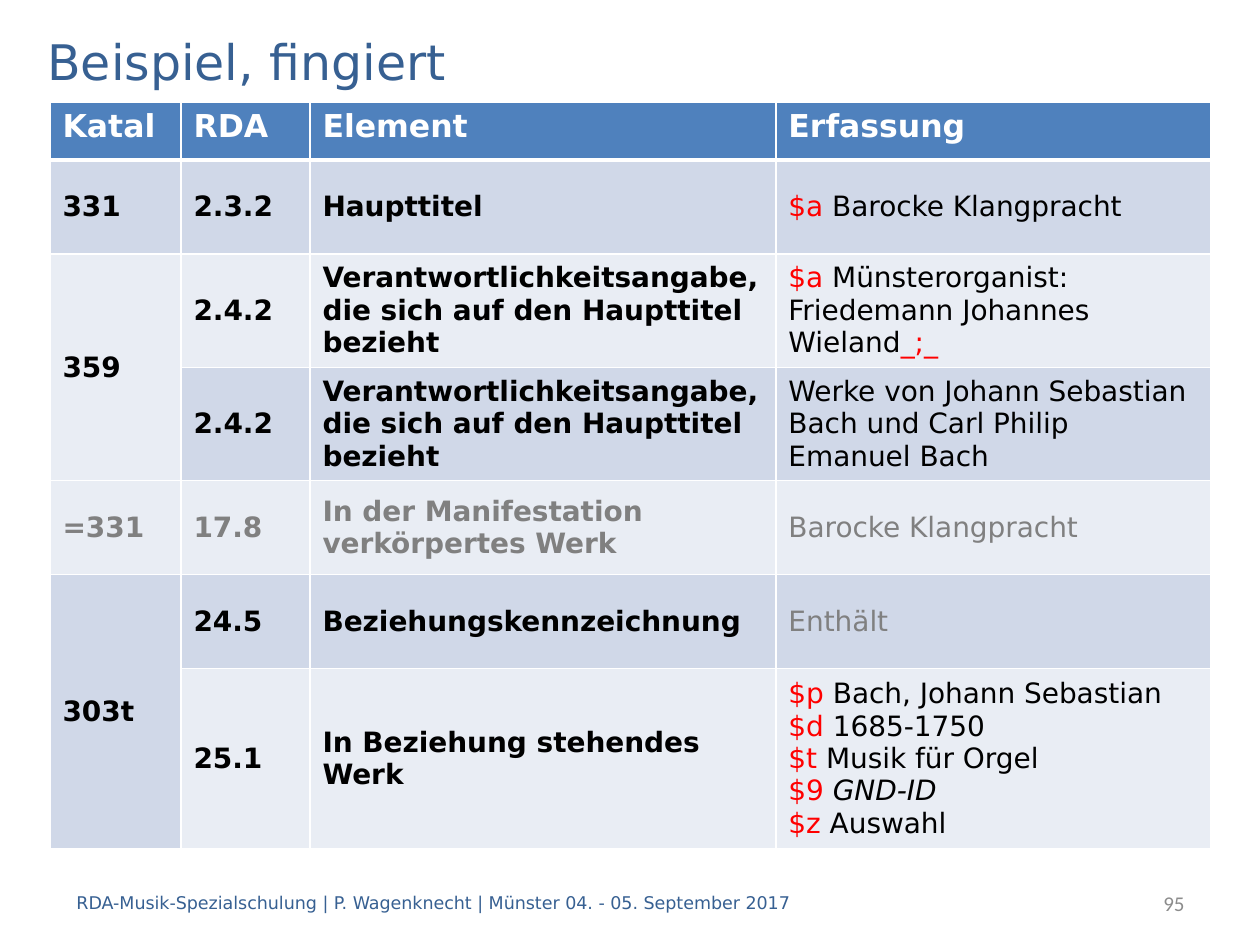
from lxml.etree import SubElement
from pptx import Presentation
from pptx.dml.color import RGBColor
from pptx.enum.text import MSO_ANCHOR, PP_ALIGN
from pptx.oxml.ns import qn
from pptx.util import Emu, Pt

EMU_PER_PX = 914400 / 126

WHITE = RGBColor(0xFF, 0xFF, 0xFF)
BLACK = RGBColor(0, 0, 0)
RED = RGBColor(0xFF, 0, 0)
GREY = RGBColor(0x80, 0x80, 0x80)
LIGHT_GREY = RGBColor(0x8C, 0x8C, 0x8C)
NAVY = RGBColor(0x37, 0x60, 0x92)
HEADER_BLUE = RGBColor(0x4F, 0x81, 0xBD)
BANDS = [RGBColor(0xD0, 0xD8, 0xE8), RGBColor(0xE9, 0xED, 0xF4)]

FONT = "DejaVu Sans"
COLUMN_WIDTHS = [131, 129, 466, 435]
ROW_HEIGHTS = [58, 94, 110, 110, 94, 94, 174]
HEADERS = ["Katal", "RDA", "Element", "Erfassung"]
RESPONSIBILITY = "Verantwortlichkeitsangabe, die sich auf den Haupttitel bezieht"

# Catalogue field (None: joined to the field above), RDA number, element, colour
ROWS = [
    ("331", "2.3.2", "Haupttitel", BLACK),
    ("359", "2.4.2", RESPONSIBILITY, BLACK),
    (None, "2.4.2", RESPONSIBILITY, BLACK),
    ("=331", "17.8", "In der Manifestation verkörpertes Werk", GREY),
    ("303t", "24.5", "Beziehungskennzeichnung", BLACK),
    (None, "25.1", "In Beziehung stehendes Werk", BLACK),
]

# Recorded values: paragraphs of (text, colour, italic) runs
ENTRIES = [
    [[("$a", RED, False), (" Barocke Klangpracht", BLACK, False)]],
    [[("$a", RED, False),
      (" Münsterorganist: Friedemann Johannes Wieland", BLACK, False),
      ("_;_", RED, False)]],
    [[("Werke von Johann Sebastian Bach und Carl Philip Emanuel Bach",
       BLACK, False)]],
    [[("Barocke Klangpracht", GREY, False)]],
    [[("Enthält", GREY, False)]],
    [[("$p", RED, False), (" Bach, Johann Sebastian", BLACK, False)],
     [("$d", RED, False), (" 1685-1750", BLACK, False)],
     [("$t", RED, False), (" Musik für Orgel", BLACK, False)],
     [("$9 ", RED, False), ("GND-ID", BLACK, True)],
     [("$z", RED, False), (" Auswahl", BLACK, False)]],
]


def px(n):
    return Emu(round(n * EMU_PER_PX))


def set_font(font, size, color=None, bold=False, name=FONT):
    font.name = name
    font.size = Pt(size)
    font.bold = bold
    if color is not None:
        font.color.rgb = color


def add_text(slide, box, text, size, color, name=FONT, align=PP_ALIGN.LEFT):
    tf = slide.shapes.add_textbox(*map(px, box)).text_frame
    tf.word_wrap = True
    tf.vertical_anchor = MSO_ANCHOR.MIDDLE
    p = tf.paragraphs[0]
    p.text = text
    p.alignment = align
    set_font(p.font, size, color, name=name)


def set_borders(cell, top=1, bottom=1):
    tcPr = cell._tc.get_or_add_tcPr()
    for side, width in (("L", 1), ("R", 1), ("T", top), ("B", bottom)):
        ln = SubElement(tcPr, qn(f"a:ln{side}"), w=str(Pt(width)))
        fill = SubElement(ln, qn("a:solidFill"))
        SubElement(fill, qn("a:srgbClr"), val=str(WHITE))


def style_cell(cell, fill, anchor=MSO_ANCHOR.MIDDLE, **borders):
    set_borders(cell, **borders)
    cell.fill.solid()
    cell.fill.fore_color.rgb = fill
    cell.vertical_anchor = anchor


def write_label(cell, text, size, color):
    p = cell.text_frame.paragraphs[0]
    p.text = text
    set_font(p.font, size, color, bold=True)


def write_entry(cell, paragraphs):
    tf = cell.text_frame
    for i, runs in enumerate(paragraphs):
        p = tf.add_paragraph() if i else tf.paragraphs[0]
        set_font(p.font, 16)
        for text, color, italic in runs:
            r = p.add_run()
            r.text = text
            r.font.color.rgb = color
            r.font.italic = italic
            r.font.bold = False


def add_field_table(slide):
    table = slide.shapes.add_table(
        len(ROW_HEIGHTS), len(HEADERS),
        px(50), px(102), px(sum(COLUMN_WIDTHS)), px(sum(ROW_HEIGHTS))).table
    for column, width in zip(table.columns, COLUMN_WIDTHS):
        column.width = px(width)
    for row, height in zip(table.rows, ROW_HEIGHTS):
        row.height = px(height)

    # Header row
    for c, text in enumerate(HEADERS):
        cell = table.cell(0, c)
        style_cell(cell, HEADER_BLUE, MSO_ANCHOR.TOP, bottom=3)
        write_label(cell, text, 18, WHITE)

    # Banded body rows
    for i, ((*labels, color), entry) in enumerate(zip(ROWS, ENTRIES), start=1):
        for c in range(len(HEADERS)):
            style_cell(table.cell(i, c), BANDS[(i - 1) % 2],
                       top=3 if i == 1 else 1)
        for c, text in enumerate(labels):
            if text is None:
                table.cell(i - 1, c).merge(table.cell(i, c))
            else:
                write_label(table.cell(i, c), text, 16, color)
        write_entry(table.cell(i, len(labels)), entry)


def main():
    prs = Presentation()
    prs.slide_width, prs.slide_height = px(1260), px(945)
    s = prs.slides.add_slide(prs.slide_layouts[6])

    # Title and table
    add_text(s, (35, 25, 1191, 71), "Beispiel, fingiert", 28, NAVY)
    add_field_table(s)

    # Footer and page number
    add_text(s, (64, 878, 1101, 50),
             "RDA-Musik-Spezialschulung | P. Wagenknecht | "
             "Münster 04. - 05. September 2017", 10, NAVY)
    add_text(s, (997, 878, 200, 50), "95", 12, LIGHT_GREY,
             name="Calibri", align=PP_ALIGN.RIGHT)
    prs.save("out.pptx")


if __name__ == "__main__":
    main()
